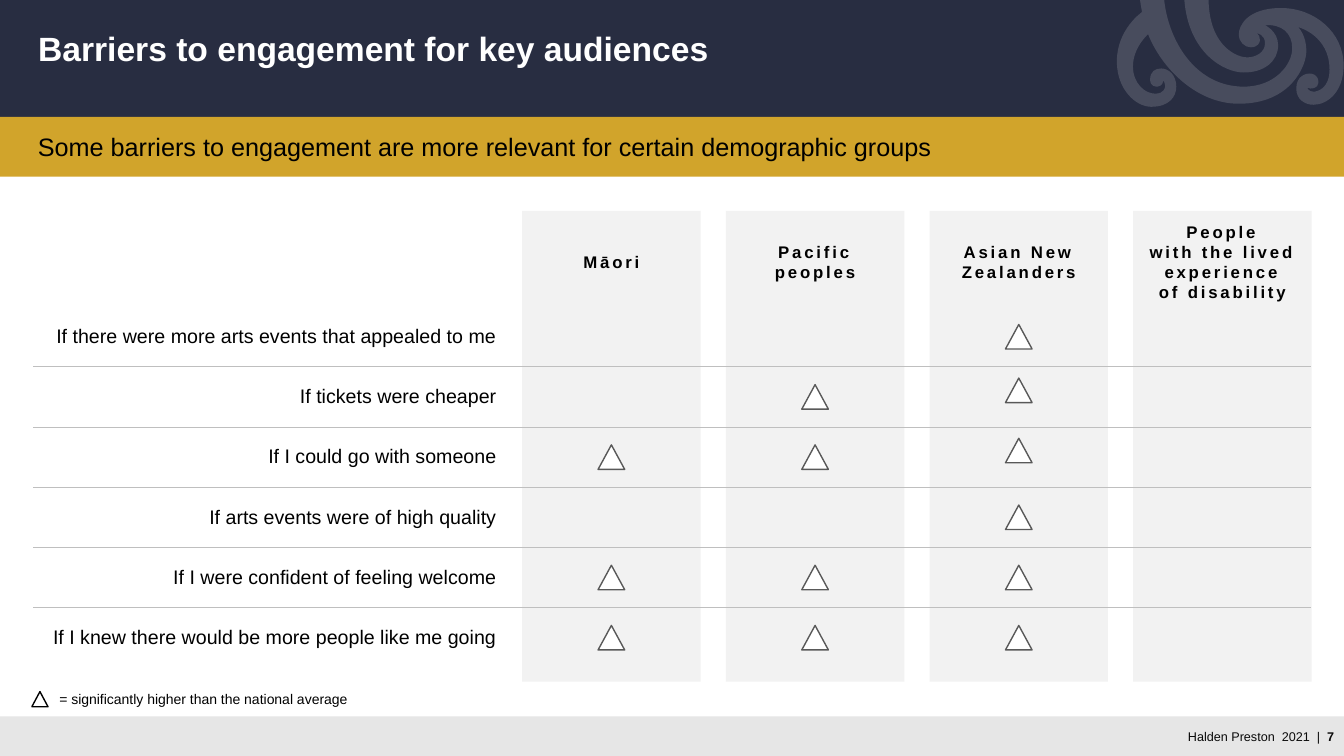
import copy

import lxml.etree
import pptx
import pptx.dml.color
import pptx.enum.shapes
import pptx.enum.text
import pptx.oxml.ns
import pptx.util

Pt = pptx.util.Pt
qn = pptx.oxml.ns.qn
Shape = pptx.enum.shapes.MSO_SHAPE
Align = pptx.enum.text.PP_ALIGN
Anchor = pptx.enum.text.MSO_ANCHOR

# Content
TITLE = "Barriers to engagement for key audiences"
SUBTITLE = "Some barriers to engagement are more relevant for certain demographic groups"
LEGEND = "= significantly higher than the national average"
FOOTER, PAGE = "Halden Preston  2021  |  ", "7"
BARRIERS = [
    "If there were more arts events that appealed to me",
    "If tickets were cheaper",
    "If I could go with someone",
    "If arts events were of high quality",
    "If I were confident of feeling welcome",
    "If I knew there would be more people like me going",
]
# Audience, heading width, barrier rows marked as significantly higher
AUDIENCES = [
    ("Māori", 117, [2, 4, 5]),
    ("Pacific peoples", 117, [1, 2, 4, 5]),
    ("Asian New Zealanders", 117, [0, 1, 2, 3, 4, 5]),
    ("People\vwith the lived experience\vof disability", 127.5, []),
]
RAISED_MARKS = {(2, 1), (2, 2)}  # (audience, barrier) set a little higher

# Header swirl in hundredths of an inch: pairs are lines, sextets are curves
SWIRL_LEFT, SWIRL_TOP = 1108, 0
SWIRL_START = (1108, 61)
SWIRL = [
    (1108, 89, 1127, 106, 1142, 106), (1160, 106, 1167, 96, 1167, 86),
    (1167, 74, 1159, 68, 1152, 68), (1146, 68, 1141, 71, 1141, 79),
    (1141, 86, 1147, 86, 1148, 86), (1149, 86, 1154, 85, 1154, 80),
    (1154, 80, 1156, 82, 1156, 85), (1156, 87, 1155, 93, 1146, 93),
    (1136, 93, 1124, 83, 1124, 66), (1124, 47, 1139, 34, 1139, 34),
    (1153, 69, 1188, 103, 1229, 103), (1281, 103, 1296, 65, 1296, 51),
    (1296, 45, 1295, 35, 1288, 27), (1288, 27, 1319, 35, 1319, 69),
    (1319, 88, 1307, 91, 1303, 91), (1298, 91, 1297, 87, 1297, 87),
    (1300, 89, 1308, 88, 1308, 82), (1308, 74, 1302, 73, 1299, 73),
    (1296, 73, 1286, 75, 1286, 88), (1286, 99, 1295, 104, 1303, 104),
    (1317, 104, 1333, 91, 1333, 65), (1333, 32, 1304, 8, 1271, 8),
    (1237, 8, 1229, 26, 1229, 34), (1229, 42, 1235, 47, 1241, 47),
    (1248, 47, 1250, 42, 1250, 40), (1250, 37, 1249, 34, 1247, 33),
    (1247, 33, 1255, 34, 1255, 43), (1255, 52, 1246, 57, 1237, 57),
    (1229, 57, 1200, 48, 1199, 0), (1175, 0),
    (1179, 52, 1214, 72, 1234, 72), (1254, 72, 1268, 61, 1268, 45),
    (1268, 31, 1255, 25, 1255, 25), (1272, 24, 1282, 33, 1282, 48),
    (1282, 64, 1265, 86, 1234, 86), (1185, 86, 1159, 39, 1155, 0),
    (1131, 0), (1132, 7, 1133, 12, 1133, 12), (1133, 12, 1108, 29, 1108, 61),
]

THEME = {
    "font": "Arial",
    "navy": "282D41", "gold": "D1A42B", "footer": "E6E6E6", "column": "F2F2F2",
    "rule": "BFBFBF", "mark": "595959", "white": "FFFFFF", "black": "000000",
    "page": "0A0A0A",
    "title_size": 24, "subtitle_size": 18, "barrier_size": 14,
    "audience_size": 12, "legend_size": 10, "footer_size": 9,
}

# Layout, in points
WIDTH, HEIGHT = 960, 540
ROWS_LEFT, ROWS_TOP, ROWS_WIDTH, ROW_HEIGHT = 22.7, 219, 332, 43
COLUMN_LEFT, COLUMN_TOP, COLUMN_WIDTH, COLUMN_HEIGHT = 373, 150.7, 127.5, 336.3
COLUMN_PITCH = 145.5
HEADING_MIDDLE, HEADING_HEIGHT = 187.2, 66
MARK_WIDTH, MARK_HEIGHT, MARK_RAISE = 19, 17.5, 4.7


def rgb(name):
    return pptx.dml.color.RGBColor.from_string(THEME[name])


def write(frame, text, size, color="black", bold=False, align=Align.LEFT,
          anchor=Anchor.TOP, tracking=0, bold_tail="", line_spacing=None):
    """Fill a text frame or table cell with one formatted paragraph."""
    frame.vertical_anchor = anchor
    frame.word_wrap = True
    paragraph = frame.paragraphs[0]
    paragraph.text = text
    paragraph.alignment = align
    paragraph.line_spacing = line_spacing
    if bold_tail:
        paragraph.add_run().text = bold_tail
    for run in paragraph.runs:
        run.font.name = THEME["font"]
        run.font.size = Pt(THEME[size])
        run.font.bold = bold or run.text == bold_tail
        run.font.color.rgb = rgb(color)
        if tracking:
            run._r.get_or_add_rPr().set("spc", str(tracking * 100))
    # Line breaks take the format of the text around them
    for line_break in paragraph._p.findall(qn("a:br")):
        line_break.insert(0, copy.deepcopy(paragraph.runs[0]._r.rPr))


def add_text(slide, left, top, width, height, text, size, **style):
    box = slide.shapes.add_textbox(Pt(left), Pt(top), Pt(width), Pt(height))
    write(box.text_frame, text, size, **style)


def paint(shape, fill, line=None):
    shape.shadow.inherit = False
    shape.fill.solid()
    shape.fill.fore_color.rgb = rgb(fill)
    if line:
        shape.line.color.rgb = rgb(line)
        shape.line.width = Pt(1)
    else:
        shape.line.fill.background()


def add_block(slide, kind, left, top, width, height, fill, line=None):
    paint(slide.shapes.add_shape(kind, Pt(left), Pt(top), Pt(width), Pt(height)),
          fill, line)


def add_swirl(slide):
    # A hundredth of an inch is 72 hundredths of a point
    outline = slide.shapes.build_freeform(
        SWIRL_START[0] * 72, SWIRL_START[1] * 72, scale=Pt(0.01))
    outline.add_line_segments([(s[-2] * 72, s[-1] * 72) for s in SWIRL], close=True)
    swirl = outline.convert_to_shape()
    paint(swirl, "white")
    color = swirl.element.find(".//" + qn("a:srgbClr"))
    lxml.etree.SubElement(color, qn("a:alpha"), val="15000")
    # Bend the straight segments into their curves
    for straight, segment in zip(swirl.element.findall(".//" + qn("a:lnTo")), SWIRL):
        if len(segment) == 6:
            curve = lxml.etree.Element(qn("a:cubicBezTo"))
            for x, y in zip(segment[::2], segment[1::2]):
                lxml.etree.SubElement(curve, qn("a:pt"), x=str((x - SWIRL_LEFT) * 72),
                                      y=str((y - SWIRL_TOP) * 72))
            straight.getparent().replace(straight, curve)


def main():
    deck = pptx.Presentation()
    deck.slide_width, deck.slide_height = Pt(WIDTH), Pt(HEIGHT)
    slide = deck.slides.add_slide(deck.slide_layouts[5])

    # Header and footer bands
    add_block(slide, Shape.RECTANGLE, 0, 0, WIDTH, 85, "navy")
    add_swirl(slide)
    add_block(slide, Shape.RECTANGLE, 0, 511.7, WIDTH, 28.3, "footer")
    add_text(slide, 820, 517, 140, 18, FOOTER, "footer_size", color="page",
             align=Align.RIGHT, anchor=Anchor.MIDDLE, bold_tail=PAGE)

    # Title, brought in front of its band, and subtitle
    title = slide.shapes.title
    title.left, title.top, title.width, title.height = Pt(20), Pt(19.5), Pt(920), Pt(33)
    title.text_frame.auto_size = pptx.enum.text.MSO_AUTO_SIZE.NONE
    write(title.text_frame, TITLE, "title_size", color="white", bold=True,
          line_spacing=0.9)
    title.element.getparent().append(title.element)
    add_block(slide, Shape.RECTANGLE, 0, 83.5, WIDTH, 42.7, "gold")
    add_text(slide, 20, 90, 920, 29, SUBTITLE, "subtitle_size")

    # Legend
    add_text(slide, 35.3, 489.6, 222, 19.4, LEGEND, "legend_size", anchor=Anchor.MIDDLE)
    add_block(slide, Shape.ISOSCELES_TRIANGLE, 22.8, 494, 11.5, 10.8, "white", "black")

    # Barriers
    barriers = slide.shapes.add_table(
        len(BARRIERS), 1, Pt(ROWS_LEFT), Pt(ROWS_TOP), Pt(ROWS_WIDTH),
        Pt(ROW_HEIGHT * len(BARRIERS))).table
    barriers.first_row = barriers.horz_banding = False
    for row, barrier in enumerate(BARRIERS):
        cell = barriers.cell(row, 0)
        cell.fill.background()
        cell.margin_left = cell.margin_right = cell.margin_top = cell.margin_bottom = 0
        write(cell.text_frame, barrier, "barrier_size", align=Align.RIGHT)
        cell.vertical_anchor = Anchor.MIDDLE

    # Audience columns with headings
    centers = [COLUMN_LEFT + COLUMN_WIDTH / 2 + COLUMN_PITCH * i
               for i in range(len(AUDIENCES))]
    for center, (audience, width, _) in zip(centers, AUDIENCES):
        add_block(slide, Shape.RECTANGLE, center - COLUMN_WIDTH / 2, COLUMN_TOP,
                  COLUMN_WIDTH, COLUMN_HEIGHT, "column")
        add_text(slide, center - width / 2, HEADING_MIDDLE - HEADING_HEIGHT / 2, width,
                 HEADING_HEIGHT, audience, "audience_size", bold=True,
                 align=Align.CENTER, anchor=Anchor.MIDDLE, tracking=2)

    # Rules between rows
    for row in range(1, len(BARRIERS)):
        y = Pt(ROWS_TOP + ROW_HEIGHT * row)
        rule = slide.shapes.add_connector(
            pptx.enum.shapes.MSO_CONNECTOR.STRAIGHT, Pt(23.7), y, Pt(936.7), y)
        rule.line.color.rgb = rgb("rule")
        rule.line.width = Pt(0.5)
        lxml.etree.SubElement(rule.element.spPr, qn("a:effectLst"))

    # Marks for significantly higher results
    for column, (center, (_, _, marked)) in enumerate(zip(centers, AUDIENCES)):
        for row in marked:
            middle = ROWS_TOP + ROW_HEIGHT * (row + 0.5)
            if (column, row) in RAISED_MARKS:
                middle -= MARK_RAISE
            add_block(slide, Shape.ISOSCELES_TRIANGLE, center - MARK_WIDTH / 2,
                      middle - MARK_HEIGHT / 2, MARK_WIDTH, MARK_HEIGHT, "white", "mark")

    deck.save("out.pptx")


if __name__ == "__main__":
    main()
